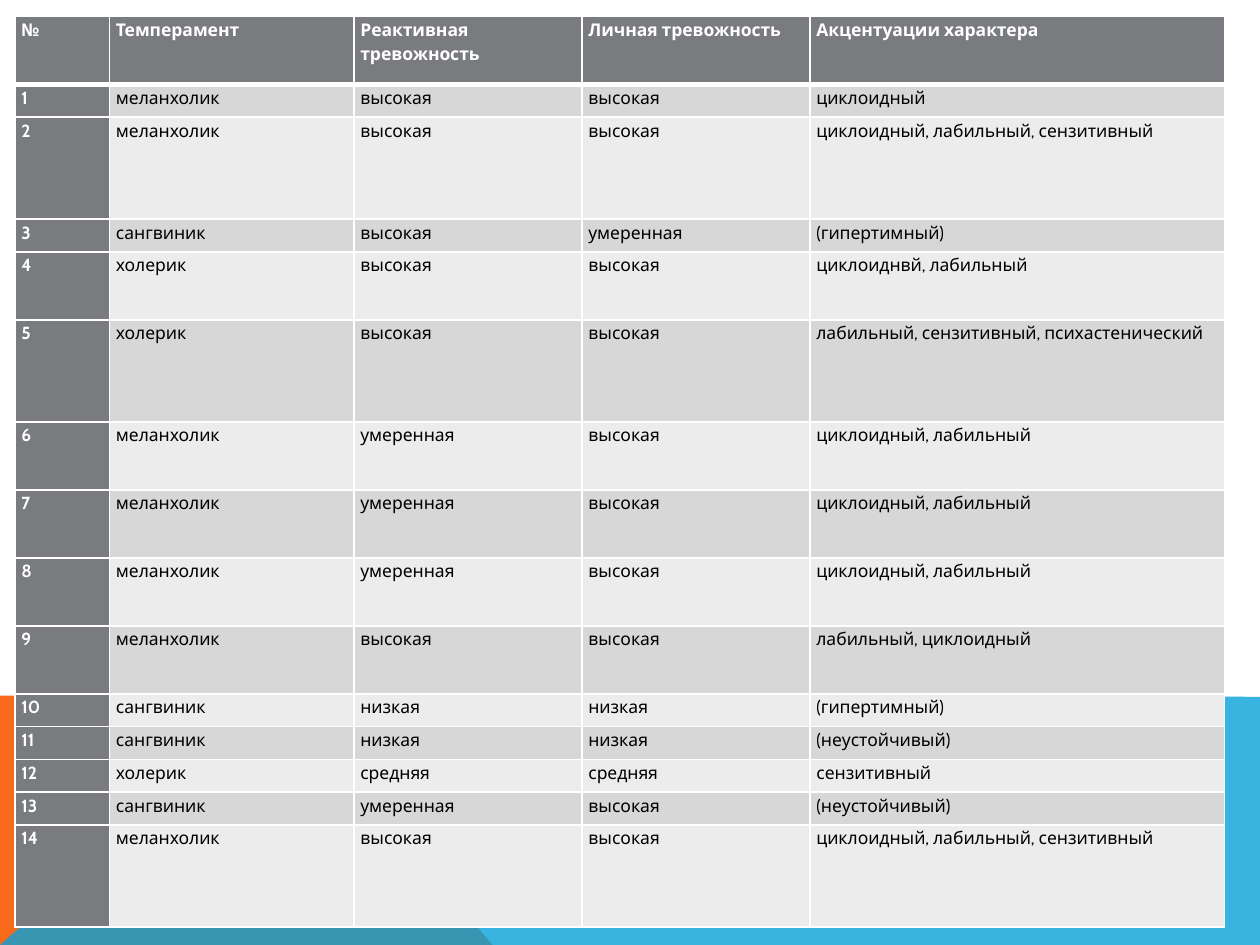
from dataclasses import dataclass

from lxml import etree
from pptx import Presentation
from pptx.dml.color import RGBColor
from pptx.enum.text import PP_ALIGN
from pptx.oxml.ns import qn
from pptx.util import Inches, Pt

JUSTIFY = PP_ALIGN.JUSTIFY
BLANK_LAYOUT = 6


@dataclass(frozen=True)
class Theme:
    font: str = "Cabin"
    size: float = 10
    line_spacing: float = 1.15
    heading_fill: str = "797B7E"
    heading_text: str = "FFFFFF"
    body_text: str = "000000"
    odd_row: str = "D7D7D8"
    even_row: str = "ECECEC"
    border: str = "FFFFFF"
    border_width: float = 1
    heading_border_width: float = 3
    orange: str = "F96A1B"
    blue: str = "08A1D9"


HEADINGS = (
    "№",
    "Темперамент",
    "Реактивная тревожность",
    "Личная тревожность",
    "Акцентуации характера",
)
RESPONDENTS = (
    ("меланхолик", "высокая", "высокая", "циклоидный"),
    ("меланхолик", "высокая", "высокая", "циклоидный, лабильный, сензитивный"),
    ("сангвиник", "высокая", "умеренная", "(гипертимный)"),
    ("холерик", "высокая", "высокая", "циклоиднвй, лабильный"),
    ("холерик", "высокая", "высокая", "лабильный, сензитивный, психастенический"),
    ("меланхолик", "умеренная", "высокая", "циклоидный, лабильный"),
    ("меланхолик", "умеренная", "высокая", "циклоидный, лабильный"),
    ("меланхолик", "умеренная", "высокая", "циклоидный, лабильный"),
    ("меланхолик", "высокая", "высокая", "лабильный, циклоидный"),
    ("сангвиник", "низкая", "низкая", "(гипертимный)"),
    ("сангвиник", "низкая", "низкая", "(неустойчивый)"),
    ("холерик", "средняя", "средняя", "сензитивный"),
    ("сангвиник", "умеренная", "высокая", "(неустойчивый)"),
    ("меланхолик", "высокая", "высокая", "циклоидный, лабильный, сензитивный"),
)
COLUMN_WIDTHS = (0.75, 1.94, 1.81, 1.81, 3.29)
HEADING_HEIGHT = 0.54
HEIGHT_BY_TRAITS = {1: 0.26, 2: 0.54, 3: 0.81}


def write_text(text_frame, text, *, font, size, color, bold, line_spacing):
    paragraph = text_frame.paragraphs[0]
    paragraph.alignment = JUSTIFY
    paragraph.line_spacing = line_spacing
    run = paragraph.add_run()
    run.text = text
    run.font.name = font
    run.font.size = Pt(size)
    run.font.bold = bold
    run.font.color.rgb = RGBColor.from_string(color)


class SlideBuilder:
    def __init__(self, slide, theme):
        self.slide = slide
        self.theme = theme

    def polygon(self, points, color, opacity=100):
        corners = [(Inches(x), Inches(y)) for x, y in points]
        builder = self.slide.shapes.build_freeform(*corners[0])
        builder.add_line_segments(corners[1:], close=True)
        shape = builder.convert_to_shape()
        shape.shadow.inherit = False
        shape.line.fill.background()
        shape.fill.solid()
        shape.fill.fore_color.rgb = RGBColor.from_string(color)
        if opacity < 100:
            color_element = shape.fill._xPr.find(".//" + qn("a:srgbClr"))
            etree.SubElement(color_element, qn("a:alpha"), val=str(opacity * 1000))

    def borders(self, cell, **widths):
        properties = cell._tc.get_or_add_tcPr()
        for side in "LRTB":
            width = widths.get(side, self.theme.border_width)
            line = etree.SubElement(properties, qn(f"a:ln{side}"), w=str(Pt(width)))
            fill = etree.SubElement(line, qn("a:solidFill"))
            etree.SubElement(fill, qn("a:srgbClr"), val=self.theme.border)

    def cell(self, cell, text, row, column):
        theme = self.theme
        heading = row == 0 or column == 0
        cell.margin_left = cell.margin_right = Inches(0.05)
        cell.margin_top = cell.margin_bottom = 0
        heading_edge = {0: "B", 1: "T"}.get(row)
        self.borders(cell, **({heading_edge: theme.heading_border_width} if heading_edge else {}))
        band = theme.odd_row if row % 2 else theme.even_row
        cell.fill.solid()
        cell.fill.fore_color.rgb = RGBColor.from_string(theme.heading_fill if heading else band)
        write_text(
            cell.text_frame,
            text,
            font=theme.font,
            size=theme.size,
            color=theme.heading_text if heading else theme.body_text,
            bold=heading,
            line_spacing=theme.line_spacing,
        )

    def table(self, left, top, widths, heights, records):
        frame = self.slide.shapes.add_table(
            len(heights),
            len(widths),
            Inches(left),
            Inches(top),
            Inches(sum(widths)),
            Inches(sum(heights)),
        )
        table = frame.table
        table.first_col = True
        for column, width in zip(table.columns, widths):
            column.width = Inches(width)
        for row, height in zip(table.rows, heights):
            row.height = Inches(height)
        for row_index, record in enumerate(records):
            for column_index, text in enumerate(record):
                self.cell(table.cell(row_index, column_index), text, row_index, column_index)


def main():
    presentation = Presentation()
    presentation.slide_width = Inches(10)
    presentation.slide_height = Inches(7.5)
    slide = presentation.slides.add_slide(presentation.slide_layouts[BLANK_LAYOUT])
    theme = Theme()
    builder = SlideBuilder(slide, theme)

    builder.polygon([(0, 7.5), (0, 5.52), (2.23, 5.52), (3.91, 7.5)], theme.orange)
    builder.polygon([(0, 7.5), (2.23, 5.52), (10, 5.53), (10, 7.5)], theme.blue, opacity=80)

    records = [HEADINGS] + [
        (str(number), *answers) for number, answers in enumerate(RESPONDENTS, start=1)
    ]
    heights = [HEADING_HEIGHT] + [
        HEIGHT_BY_TRAITS[len(answers[-1].split(", "))] for answers in RESPONDENTS
    ]
    builder.table(0.12, 0.13, COLUMN_WIDTHS, heights, records)

    presentation.save("out.pptx")


if __name__ == "__main__":
    main()
